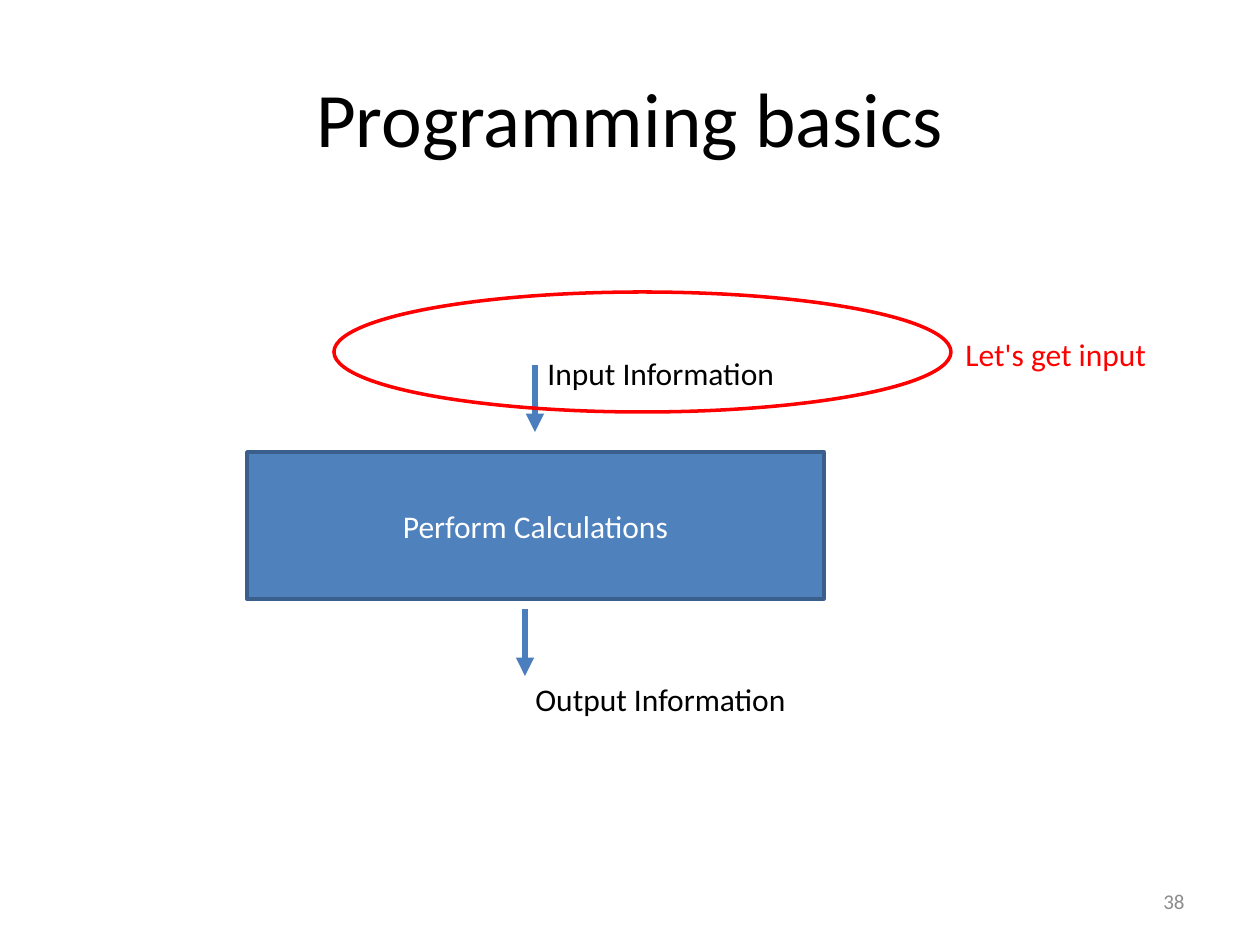
"""Build the programming basics slide: input, calculation and output."""
from dataclasses import dataclass

from lxml.etree import SubElement
from pptx import Presentation
from pptx.dml.color import RGBColor as Color
from pptx.enum.shapes import MSO_CONNECTOR as Connector, MSO_SHAPE as Shape
from pptx.enum.text import MSO_ANCHOR as Anchor, PP_ALIGN as Align
from pptx.oxml.ns import qn
from pptx.util import Emu, Pt


@dataclass(frozen=True)
class Theme:
    font: str = "Calibri"
    black: str = "000000"
    white: str = "FFFFFF"
    gray: str = "8C8C8C"
    red: str = "FF0000"
    box_fill: str = "4F81BD"
    box_line: str = "3A5F8C"
    arrow: str = "4B7EBC"
    title_size: int = 44
    body_size: int = 18
    number_size: int = 12
    outline: float = 2
    arrow_width: float = 3.5


theme = Theme()
PX = 914400 // 126


def px(*lengths):
    return [Emu(length * PX) for length in lengths]


def write(shape, text, size, color, align, anchor):
    frame = shape.text_frame
    frame.text = text
    frame.word_wrap = True
    frame.vertical_anchor = anchor
    paragraph = frame.paragraphs[0]
    paragraph.alignment = align
    font = paragraph.runs[0].font
    font.name = theme.font
    font.size = Pt(size)
    font.color.rgb = Color.from_string(color)


presentation = Presentation()
presentation.slide_width, presentation.slide_height = px(1260, 945)
slide = presentation.slides.add_slide(presentation.slide_layouts[6])
shapes = slide.shapes

for y in (365, 609):
    x = 535 if y == 365 else 525
    arrow = shapes.add_connector(Connector.STRAIGHT, *px(x, y, x, y + 67))
    arrow.line.color.rgb = Color.from_string(theme.arrow)
    arrow.line.width = Pt(theme.arrow_width)
    SubElement(arrow.line._get_or_add_ln(), qn("a:tailEnd"), type="triangle")
    SubElement(arrow._element.spPr, qn("a:effectLst"))

box = shapes.add_shape(Shape.RECTANGLE, *px(247, 452, 577, 147))
box.fill.solid()
box.fill.fore_color.rgb = Color.from_string(theme.box_fill)
write(box, "Perform Calculations", theme.body_size, theme.white, Align.CENTER, Anchor.MIDDLE)

highlight = shapes.add_shape(Shape.OVAL, *px(334, 292, 617, 120))
highlight.fill.background()

for shape, color in ((box, theme.box_line), (highlight, theme.red)):
    shape.shadow.inherit = False
    shape.line.color.rgb = Color.from_string(color)
    shape.line.width = Pt(theme.outline)

labels = [
    ("Programming basics", (63, 38, 1134, 157), theme.title_size, theme.black, Align.CENTER, Anchor.MIDDLE),
    ("Input Information", (535, 348, 451, 50), theme.body_size, theme.black, Align.LEFT, Anchor.TOP),
    ("Output Information", (523, 674, 451, 50), theme.body_size, theme.black, Align.LEFT, Anchor.TOP),
    ("Let's get input", (953, 329, 244, 50), theme.body_size, theme.red, Align.LEFT, Anchor.TOP),
    ("38", (903, 876, 294, 50), theme.number_size, theme.gray, Align.RIGHT, Anchor.MIDDLE),
]
for text, bounds, size, color, align, anchor in labels:
    write(shapes.add_textbox(*px(*bounds)), text, size, color, align, anchor)

presentation.save("out.pptx")
